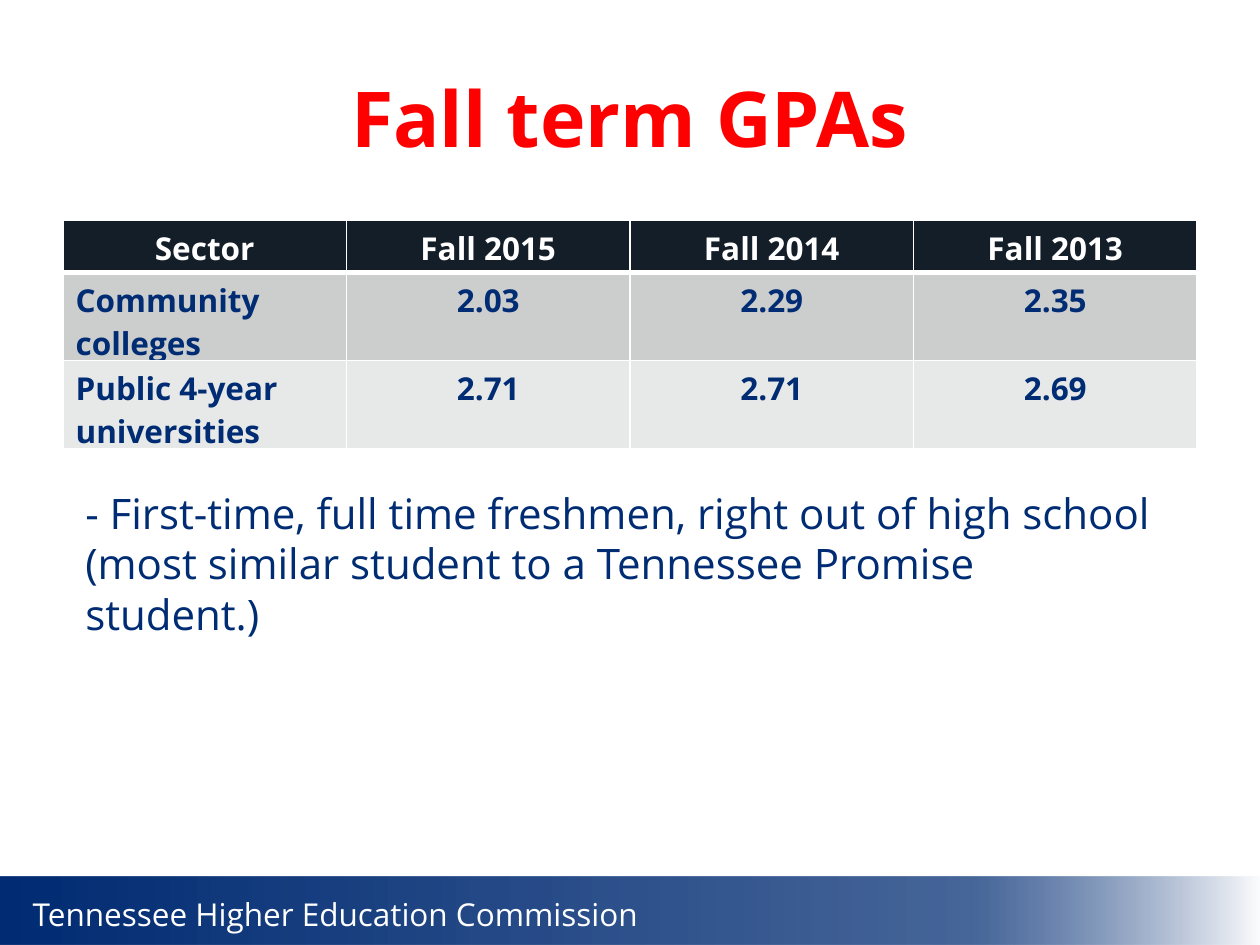
from dataclasses import dataclass

from lxml import etree
from pptx import Presentation
from pptx.dml.color import RGBColor
from pptx.enum import shapes, text
from pptx.oxml.ns import qn
from pptx.util import Cm, Pt


@dataclass(frozen=True)
class Theme:
    font: str = "Open Sans"
    navy: str = "002C73"
    red: str = "FF0000"
    white: str = "FFFFFF"
    header: str = "131E29"
    bands: tuple = ("CCCDCD", "E7E8E8")
    title_size: int = 44
    note_size: int = 24
    body_size: int = 18


THEME = Theme()
TITLE_ONLY = 5
GPA_ROWS = [
    ("Sector", "Fall 2015", "Fall 2014", "Fall 2013"),
    ("Community colleges", "2.03", "2.29", "2.35"),
    ("Public 4-year universities", "2.71", "2.71", "2.69"),
]


def write(frame, words, size, color, bold=False, align=text.PP_ALIGN.LEFT):
    frame.text = words
    para = frame.paragraphs[0]
    para.alignment = align
    font = para.runs[0].font
    font.name, font.size, font.bold = THEME.font, Pt(size), bold
    font.color.rgb = RGBColor.from_string(color)


def add_color(parent, color):
    return etree.SubElement(parent, qn("a:srgbClr"), val=color)


def fade(shape, stops):
    """Fill left to right with (position %, colour, opacity %) stops."""
    shape.fill.gradient()
    shape.fill.gradient_angle = 0
    stop_list = shape._element.spPr.find(qn("a:gradFill")).find(qn("a:gsLst"))
    stop_list.clear()
    for position, color, opacity in stops:
        stop = etree.SubElement(stop_list, qn("a:gs"), pos=str(position * 1000))
        color_element = add_color(stop, color)
        if opacity < 100:
            etree.SubElement(color_element, qn("a:alpha"), val=str(opacity * 1000))


def add_footer_band(page):
    band = page.shapes.add_shape(
        shapes.MSO_SHAPE.RECTANGLE, Cm(0), Cm(17.68), Cm(25.45), Cm(1.37))
    band.shadow.inherit = False
    band.line.fill.background()
    fade(band, [(0, THEME.navy, 100), (77, THEME.navy, 72), (100, THEME.white, 100)])


def add_text(page, words, left, top, width, height, size, color, wrap=True):
    box = page.shapes.add_textbox(Cm(left), Cm(top), Cm(width), Cm(height))
    box.text_frame.word_wrap = wrap
    box.text_frame.auto_size = text.MSO_AUTO_SIZE.SHAPE_TO_FIT_TEXT
    write(box.text_frame, words, size, color)


def set_title(page, words):
    title = page.shapes.title
    title.left, title.top = Cm(1.27), Cm(0.76)
    title.width, title.height = Cm(22.86), Cm(3.18)
    title.text_frame.vertical_anchor = text.MSO_ANCHOR.MIDDLE
    write(title.text_frame, words, THEME.title_size, THEME.red, True,
          text.PP_ALIGN.CENTER)


def set_borders(cell, top, bottom):
    properties = cell._tc.get_or_add_tcPr()
    for side, width in (("L", 1), ("R", 1), ("T", top), ("B", bottom)):
        line = etree.SubElement(properties, qn(f"a:ln{side}"), w=str(Pt(width)))
        add_color(etree.SubElement(line, qn("a:solidFill")), THEME.white)


def format_cell(cell, words, row, column):
    """Style by place: dark header, banded rows, left-aligned sector names."""
    is_header = row == 0
    set_borders(cell, top=3 if row == 1 else 1, bottom=3 if is_header else 1)
    cell.fill.solid()
    fill = THEME.header if is_header else THEME.bands[row - 1]
    cell.fill.fore_color.rgb = RGBColor.from_string(fill)
    centred = is_header or column > 0
    write(cell.text_frame, words, THEME.body_size,
          THEME.white if is_header else THEME.navy, True,
          text.PP_ALIGN.CENTER if centred else text.PP_ALIGN.LEFT)


def add_gpa_table(page):
    row_height = Cm(1.04)
    table = page.shapes.add_table(
        len(GPA_ROWS), len(GPA_ROWS[0]), Cm(1.27), Cm(4.45),
        Cm(22.86), row_height * len(GPA_ROWS)).table
    for row, values in enumerate(GPA_ROWS):
        for column, words in enumerate(values):
            format_cell(table.cell(row, column), words, row, column)


def main():
    deck = Presentation()
    deck.slide_width, deck.slide_height = Cm(25.4), Cm(19.05)
    page = deck.slides.add_slide(deck.slide_layouts[TITLE_ONLY])
    add_footer_band(page)
    add_text(page, "Tennessee Higher Education Commission",
             0.41, 17.91, 12.83, 1.02, THEME.body_size, THEME.white, wrap=False)
    set_title(page, "Fall term GPAs")
    add_gpa_table(page)
    add_text(page, "- First-time, full time freshmen, right out of high school "
             "(most similar student to a Tennessee Promise student.)",
             1.47, 9.7, 22.02, 3.33, THEME.note_size, THEME.navy)
    deck.save("out.pptx")


if __name__ == "__main__":
    main()
